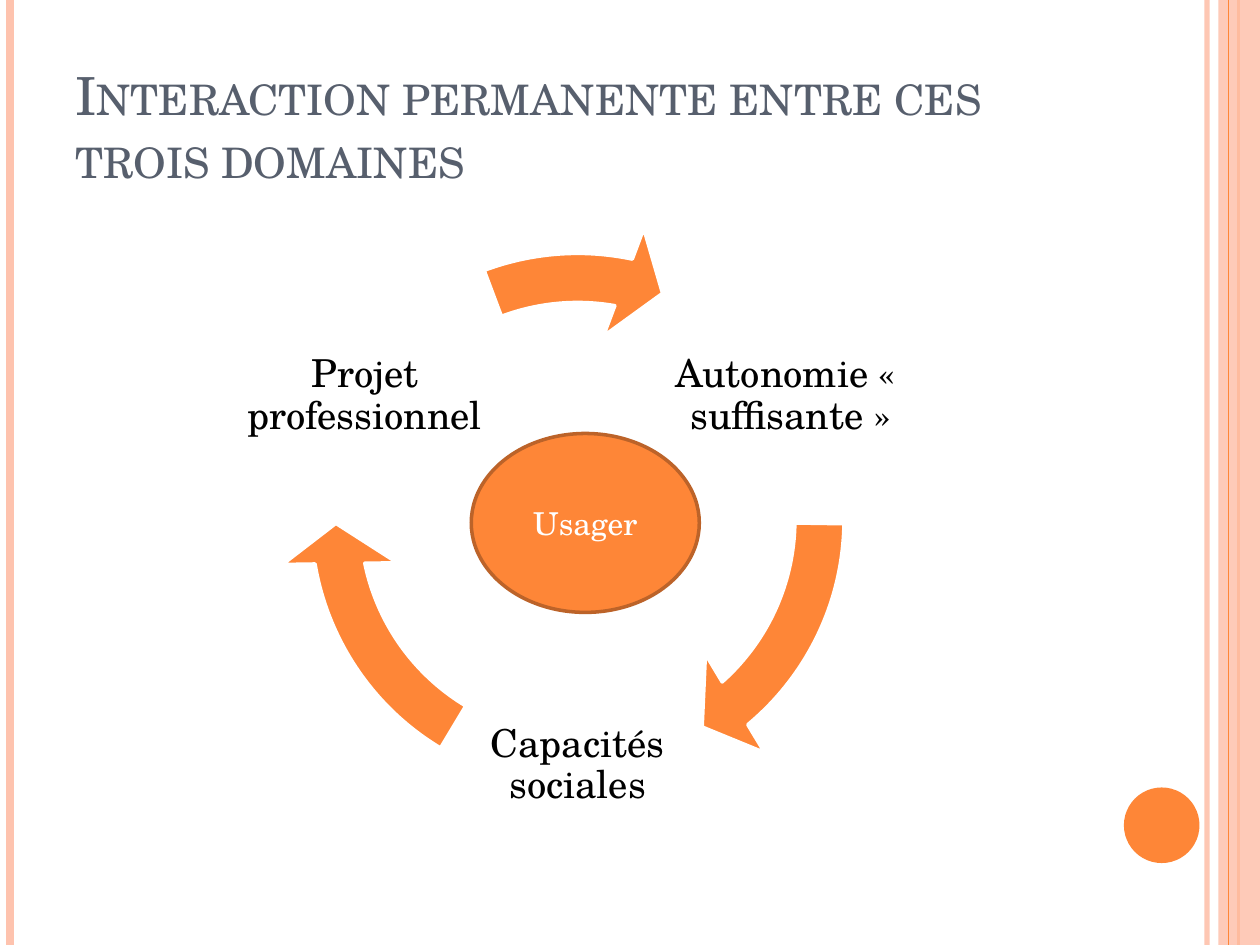
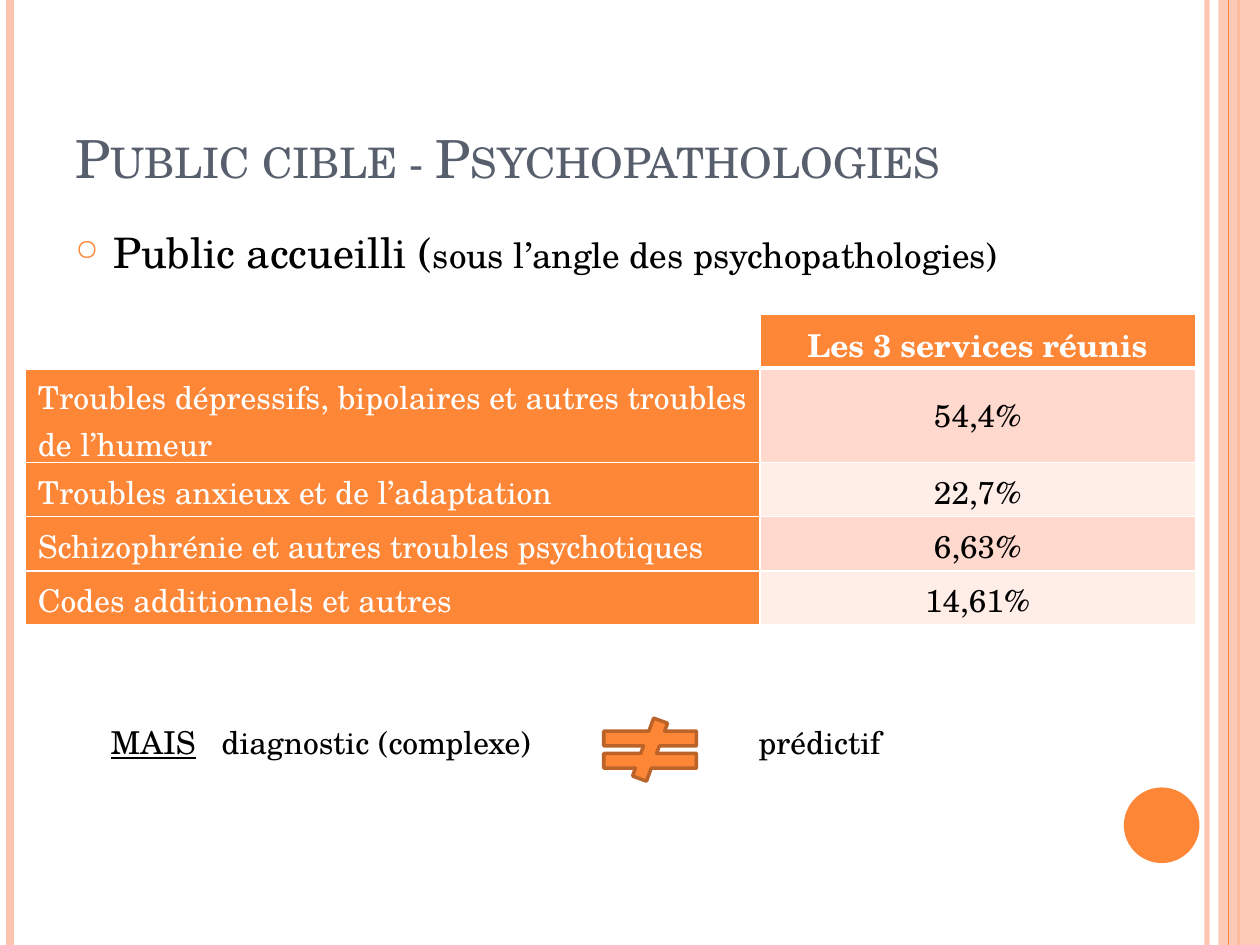
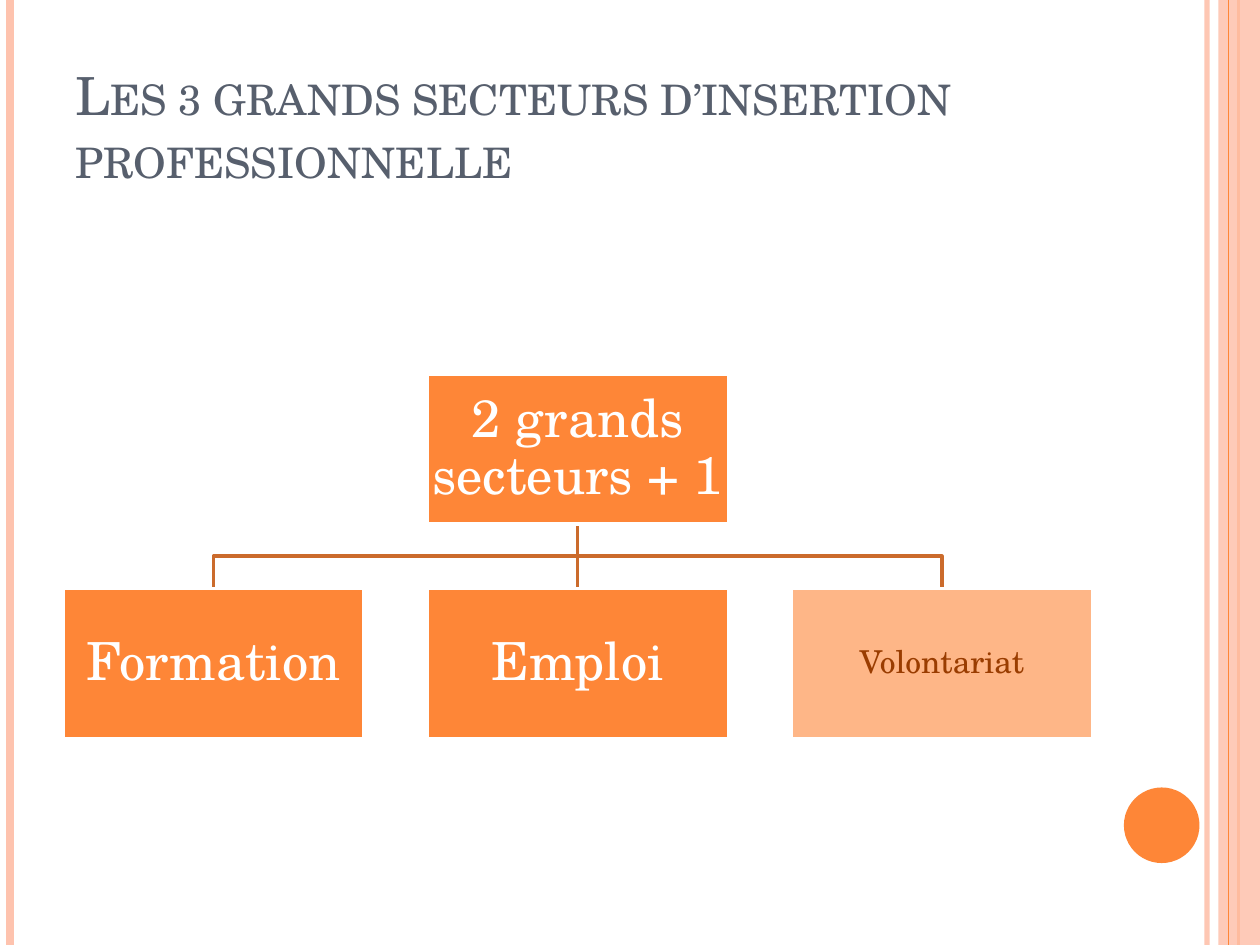
from typing import NamedTuple

from lxml.etree import SubElement
from pptx import Presentation
from pptx.dml.color import RGBColor
from pptx.enum.shapes import MSO_CONNECTOR, MSO_SHAPE
from pptx.enum.text import MSO_ANCHOR, PP_ALIGN
from pptx.oxml.ns import qn
from pptx.util import Inches, Pt

FONT = "TeX Gyre Schola"
ORANGE = RGBColor(0xFE, 0x86, 0x37)
DARK_ORANGE = RGBColor(0xBC, 0x63, 0x29)
LINK_ORANGE = RGBColor(0xCB, 0x6B, 0x2C)
LIGHT_ORANGE = RGBColor(0xFE, 0xB6, 0x87)
BROWN = RGBColor(0x9A, 0x3D, 0x01)
PINK = RGBColor(0xFE, 0xC3, 0xAE)
BAND_COLORS = (RGBColor(0xFF, 0xD9, 0xCE), RGBColor(0xFF, 0xED, 0xE8))
SLATE = RGBColor(0x57, 0x5F, 0x6D)
BLACK = RGBColor(0, 0, 0)
WHITE = RGBColor(0xFF, 0xFF, 0xFF)
SLIDE_WIDTH, SLIDE_HEIGHT = 10, 7.5


class Box(NamedTuple):
    left: float
    top: float
    width: float
    height: float

    def lengths(self) -> list:
        return [Inches(value) for value in self]


class Rule(NamedTuple):
    x: float
    color: RGBColor
    weight: float
    opacity: int = 100


class CycleStep(NamedTuple):
    label: str
    left: float
    top: float
    arrow_start: float
    arrow_end: float


class Sector(NamedTuple):
    name: str
    size: float = 30
    fill: RGBColor = ORANGE
    color: RGBColor = WHITE


# Shared drawing functions
def set_opacity(fill_parent, percent: int) -> None:
    color = next(fill_parent.iter(qn("a:srgbClr")))
    SubElement(color, qn("a:alpha"), val=str(percent * 1000))


def set_font(font, size: float, color: RGBColor) -> None:
    font.name = FONT
    font.size = Pt(size)
    font.color.rgb = color


def write(frame, text: str, size: float, color: RGBColor, align=PP_ALIGN.LEFT,
          anchor=MSO_ANCHOR.TOP, spacing: float = 1, inset: float | None = None):
    frame.word_wrap = True
    frame.vertical_anchor = anchor
    if inset is not None:
        frame.margin_left = frame.margin_right = Inches(inset)
        frame.margin_top = frame.margin_bottom = Inches(inset)
    paragraph = frame.paragraphs[0]
    paragraph.alignment = align
    paragraph.line_spacing = spacing
    if text:
        paragraph.add_run().text = text
    set_font(paragraph.font, size, color)
    return paragraph


def add_text(slide, box: Box, *args, **options):
    return write(slide.shapes.add_textbox(*box.lengths()).text_frame, *args, **options)


def add_filled(slide, kind, box: Box, fill: RGBColor, line: RGBColor | None = None):
    shape = slide.shapes.add_shape(kind, *box.lengths())
    shape.shadow.inherit = False
    shape.fill.solid()
    shape.fill.fore_color.rgb = fill
    if line is None:
        shape.line.fill.background()
    else:
        shape.line.color.rgb = line
        shape.line.width = Pt(2)
    return shape


def add_line(slide, start: tuple, end: tuple, color: RGBColor, weight: float):
    line = slide.shapes.add_connector(
        MSO_CONNECTOR.STRAIGHT, *(Inches(value) for value in (*start, *end)))
    line.line.color.rgb = color
    line.line.width = Pt(weight)
    SubElement(line._element.spPr, qn("a:effectLst"))
    return line


def add_rule(slide, rule: Rule) -> None:
    line = add_line(slide, (rule.x, 0), (rule.x, SLIDE_HEIGHT), rule.color, rule.weight)
    if rule.opacity < 100:
        set_opacity(line._element.spPr, rule.opacity)


def new_slide(presentation, title: str):
    slide = presentation.slides.add_slide(presentation.slide_layouts[6])
    for rule in (Rule(9.58, PINK, 3, 93), Rule(0.08, PINK, 4.5), Rule(9.83, ORANGE, 1.5)):
        add_rule(slide, rule)
    band = add_filled(slide, MSO_SHAPE.RECTANGLE, Box(9.67, 0, 0.33, SLIDE_HEIGHT), PINK)
    set_opacity(band._element.spPr, 87)
    add_rule(slide, Rule(9.75, ORANGE, 0.75))
    add_filled(slide, MSO_SHAPE.OVAL, Box(8.92, 6.25, 0.6, 0.6), ORANGE)
    paragraph = add_text(slide, Box(0.5, 0.3, 8.17, 1.25), title, 30, SLATE,
                         anchor=MSO_ANCHOR.BOTTOM)
    paragraph._p.pPr.get_or_add_defRPr().set("cap", "small")
    return slide


# Slide 1: cycle of the three domains
CYCLE_BOX = Box(2.21, 1.75, 4.75, 4.75)
CYCLE_STEPS = (
    CycleStep("Autonomie «  suffisante »", 5.27, 2.14, 0.86, 49.4),
    CycleStep("Capacités sociales", 3.58, 5.07, 121, 169.54),
    CycleStep("Projet professionnel", 1.89, 2.14, 249.45, 280.95),
)
ANGLE_UNIT = 0.6  # adjustment value of one degree


def add_cycle_step(slide, step: CycleStep) -> None:
    add_text(slide, Box(step.left, step.top, 2.01, 2.01), step.label, 22, BLACK,
             PP_ALIGN.CENTER, MSO_ANCHOR.MIDDLE, 0.9, 0.03)
    arrow = add_filled(slide, MSO_SHAPE.CIRCULAR_ARROW, CYCLE_BOX, ORANGE, WHITE)
    thickness, head_width, head_angle = 8.2 / 100, 9.6 / 100, 9.6
    values = (thickness, head_angle * ANGLE_UNIT, step.arrow_end * ANGLE_UNIT,
              step.arrow_start * ANGLE_UNIT, head_width)
    for index, value in enumerate(values):
        arrow.adjustments[index] = value


def build_cycle_slide(presentation) -> None:
    slide = new_slide(presentation, "Interaction permanente entre ces trois domaines")
    for step in CYCLE_STEPS:
        add_cycle_step(slide, step)
    user = add_filled(slide, MSO_SHAPE.OVAL, Box(3.74, 3.44, 1.81, 1.42), ORANGE, DARK_ORANGE)
    write(user.text_frame, "Usager", 18, WHITE, PP_ALIGN.CENTER, MSO_ANCHOR.MIDDLE)


# Slide 2: table of disorders
TABLE_ROWS = (
    ("", "Les 3 services réunis"),
    ("Troubles dépressifs, bipolaires et autres troubles de l’humeur", "54,4%"),
    ("Troubles anxieux et de l’adaptation", "22,7%"),
    ("Schizophrénie et autres troubles psychotiques", "6,63%"),
    ("Codes additionnels et autres", "14,61%"),
)
COLUMN_WIDTHS = (5.83, 3.46)
ROW_HEIGHTS = (0.43, 0.75, 0.43, 0.43, 0.43)


def set_borders(cell, top: float, bottom: float) -> None:
    properties = cell._tc.get_or_add_tcPr()
    for side, weight in (("L", 1), ("R", 1), ("T", top), ("B", bottom)):
        line = SubElement(properties, qn(f"a:ln{side}"), w=str(Pt(weight)))
        SubElement(SubElement(line, qn("a:solidFill")), qn("a:srgbClr"), val=str(WHITE))


def fill_cell(cell, text: str, row: int, column: int) -> None:
    set_borders(cell, top=3 if row == 1 else 1, bottom=3 if row == 0 else 1)
    is_value = column == 1 and row > 0
    cell.fill.solid()
    if is_value:
        cell.fill.fore_color.rgb = BAND_COLORS[(row - 1) % 2]
    else:
        cell.fill.fore_color.rgb = ORANGE if text else WHITE
    cell.vertical_anchor = MSO_ANCHOR.MIDDLE if column else MSO_ANCHOR.TOP
    paragraph = cell.text_frame.paragraphs[0]
    paragraph.alignment = PP_ALIGN.CENTER if column else PP_ALIGN.LEFT
    if text:
        paragraph.add_run().text = text
    set_font(paragraph.font, 18, BLACK if is_value else WHITE)
    paragraph.font.bold = row == 0


def add_disorder_table(slide) -> None:
    box = Box(0.2, 2.49, sum(COLUMN_WIDTHS), sum(ROW_HEIGHTS))
    table = slide.shapes.add_table(len(TABLE_ROWS), len(COLUMN_WIDTHS), *box.lengths()).table
    table.first_row = table.horz_banding = False
    for column, width in zip(table.columns, COLUMN_WIDTHS):
        column.width = Inches(width)
    for row, height in zip(table.rows, ROW_HEIGHTS):
        row.height = Inches(height)
    for row, texts in enumerate(TABLE_ROWS):
        for column, text in enumerate(texts):
            fill_cell(table.cell(row, column), text, row, column)


def add_bullet(paragraph) -> None:
    properties = paragraph._p.get_or_add_pPr()
    properties.set("marL", str(Inches(0.3)))
    properties.set("indent", str(Inches(-0.3)))
    default_font = properties.get_or_add_defRPr()
    color = SubElement(properties, qn("a:buClr"))
    SubElement(color, qn("a:srgbClr"), val=str(ORANGE))
    SubElement(properties, qn("a:buSzPct"), val="70000")
    SubElement(properties, qn("a:buChar"), char="○")
    properties.append(default_font)


def add_tab_stops(paragraph, positions: tuple) -> None:
    properties = paragraph._p.get_or_add_pPr()
    default_font = properties.get_or_add_defRPr()
    stops = SubElement(properties, qn("a:tabLst"))
    for position in positions:
        SubElement(stops, qn("a:tab"), pos=str(Inches(position)), algn="l")
    properties.append(default_font)


def build_table_slide(presentation) -> None:
    slide = new_slide(presentation, "Public cible - Psychopathologies")
    intro = add_text(slide, Box(0.5, 1.75, 8.17, 5.33), "Public accueilli (", 24, BLACK)
    intro.space_before = Pt(6)
    detail = intro.add_run()
    detail.text = "sous l’angle des psychopathologies)"
    detail.font.size = Pt(20)
    add_bullet(intro)
    add_disorder_table(slide)

    # Closing remark around the "not equal" sign
    remark = add_text(slide, Box(0.78, 5.69, 7.87, 0.4), "MAIS", 18, BLACK)
    remark.runs[0].font.underline = True
    remark.add_run().text = "\tdiagnostic (complexe)\tprédictif"
    add_tab_stops(remark, (0.88, 5.14))
    add_filled(slide, MSO_SHAPE.MATH_NOT_EQUAL, Box(4.66, 5.7, 1, 0.5), ORANGE, DARK_ORANGE)


# Slide 3: tree of sectors
ROOT = Sector("2 grands secteurs + 1")
SECTORS = (
    Sector("Formation"),
    Sector("Emploi"),
    Sector("Volontariat", 18, LIGHT_ORANGE, BROWN),
)
SECTOR_WIDTH, SECTOR_HEIGHT, SECTOR_PITCH = 2.39, 1.19, 2.89
ROOT_TOP, SECTOR_TOP = 2.97, 4.67
ROOT_BOTTOM = ROOT_TOP + SECTOR_HEIGHT


def sector_left(index: int) -> float:
    return 0.5 + index * SECTOR_PITCH


def add_sector(slide, sector: Sector, index: int, top: float):
    box = Box(sector_left(index), top, SECTOR_WIDTH, SECTOR_HEIGHT)
    shape = add_filled(slide, MSO_SHAPE.RECTANGLE, box, sector.fill, WHITE)
    write(shape.text_frame, sector.name, sector.size, sector.color,
          PP_ALIGN.CENTER, MSO_ANCHOR.MIDDLE, 0.9, 0.02)
    return shape


def add_elbow(slide, index: int) -> None:
    start_x, end_x = (sector_left(i) + SECTOR_WIDTH / 2 for i in (1, index))
    middle_y = (ROOT_BOTTOM + SECTOR_TOP) / 2
    builder = slide.shapes.build_freeform(Inches(start_x), Inches(ROOT_BOTTOM))
    corners = ((start_x, middle_y), (end_x, middle_y), (end_x, SECTOR_TOP))
    builder.add_line_segments([(Inches(x), Inches(y)) for x, y in corners], close=False)
    elbow = builder.convert_to_shape()
    elbow.shadow.inherit = False
    elbow.fill.background()
    elbow.line.color.rgb = LINK_ORANGE
    elbow.line.width = Pt(2)


def build_tree_slide(presentation) -> None:
    slide = new_slide(presentation, "Les 3 grands secteurs d’insertion professionnelle")
    for index in (2, 0):
        add_elbow(slide, index)
    center_x = sector_left(1) + SECTOR_WIDTH / 2
    trunk = add_line(slide, (center_x, ROOT_BOTTOM), (center_x, SECTOR_TOP), LINK_ORANGE, 2)
    root = add_sector(slide, ROOT, 1, ROOT_TOP)
    sectors = [add_sector(slide, sector, index, SECTOR_TOP)
               for index, sector in enumerate(SECTORS)]
    trunk.begin_connect(root, 2)
    trunk.end_connect(sectors[1], 0)


def main() -> None:
    presentation = Presentation()
    presentation.slide_width = Inches(SLIDE_WIDTH)
    presentation.slide_height = Inches(SLIDE_HEIGHT)
    build_cycle_slide(presentation)
    build_table_slide(presentation)
    build_tree_slide(presentation)
    presentation.save("out.pptx")


if __name__ == "__main__":
    main()
